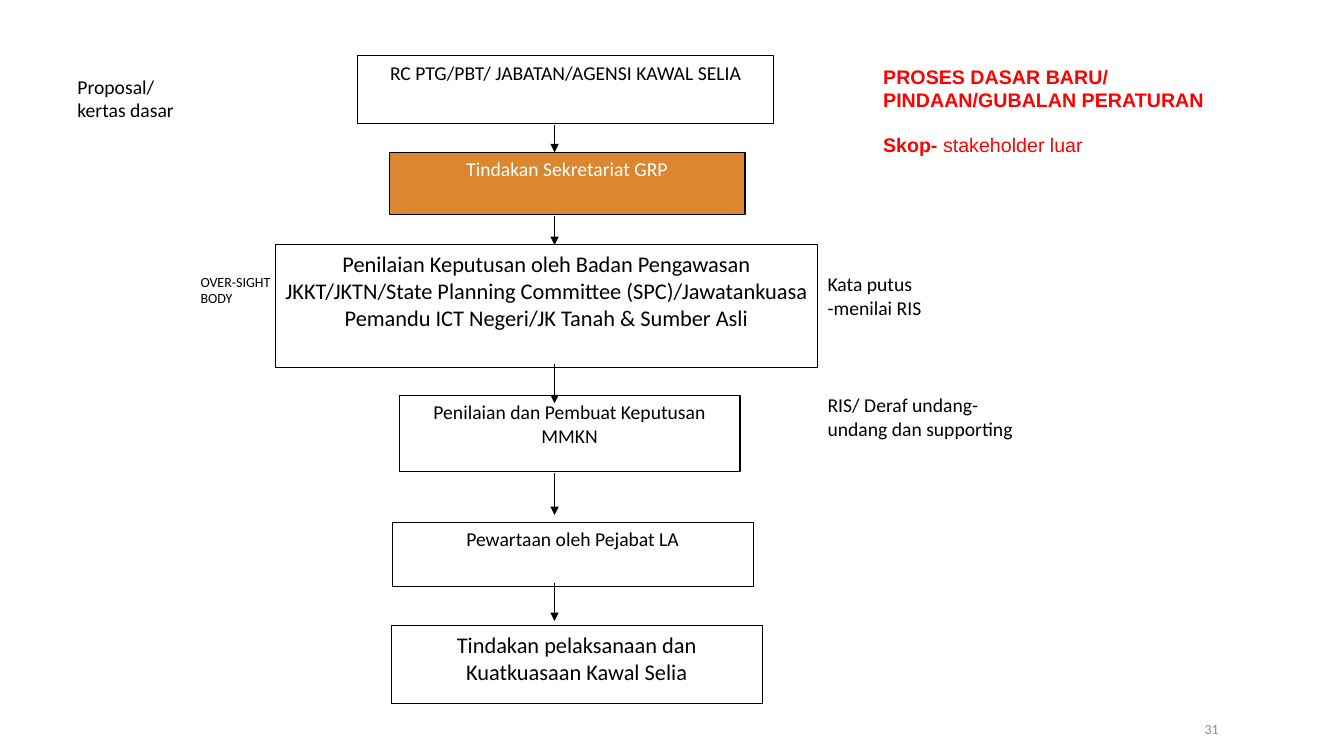
from dataclasses import dataclass
from typing import Optional

from lxml.etree import SubElement
from pptx import Presentation
from pptx.dml.color import RGBColor
from pptx.enum.shapes import MSO_CONNECTOR, MSO_SHAPE
from pptx.enum.text import MSO_ANCHOR, MSO_AUTO_SIZE, PP_ALIGN
from pptx.oxml.ns import qn
from pptx.util import Inches, Pt

BLACK = RGBColor(0x00, 0x00, 0x00)
WHITE = RGBColor(0xFF, 0xFF, 0xFF)
ORANGE = RGBColor(0xDB, 0x86, 0x31)
RED = RGBColor(0xFF, 0x00, 0x00)
GRAY = RGBColor(0x8C, 0x8C, 0x8C)
ARROW_X = 5.5


@dataclass
class Run:
    text: str
    bold: bool = False


@dataclass
class Style:
    size: float = 14
    color: RGBColor = BLACK
    font: str = "Calibri"
    align: PP_ALIGN = PP_ALIGN.LEFT
    anchor: MSO_ANCHOR = MSO_ANCHOR.TOP


@dataclass
class Step:
    left: float
    top: float
    width: float
    height: float
    text: str
    size: float = 14
    fill: Optional[RGBColor] = None


@dataclass
class Label:
    left: float
    top: float
    width: float
    height: float
    paragraphs: list[list[Run]]
    style: Style


@dataclass
class Arrow:
    start: float
    end: float


BODY = Style()
HEADING = Style(color=RED, font="Arial")

TITLE = Label(8.66, 0.59, 4.33, 0.68,
              [[Run("PROSES DASAR BARU/ PINDAAN/GUBALAN PERATURAN", True)]], HEADING)

STEPS = [
    Step(3.55, 0.55, 4.12, 0.68, "RC PTG/PBT/ JABATAN/AGENSI KAWAL SELIA"),
    Step(3.86, 1.51, 3.53, 0.62, "Tindakan Sekretariat GRP", fill=ORANGE),
    Step(2.73, 2.43, 5.38, 1.22,
         "Penilaian Keputusan oleh Badan Pengawasan JKKT/JKTN/State Planning "
         "Committee (SPC)/Jawatankuasa Pemandu ICT Negeri/JK Tanah & Sumber Asli", 16),
    Step(3.96, 3.92, 3.38, 0.76, "Penilaian dan Pembuat Keputusan MMKN"),
    Step(3.89, 5.18, 3.58, 0.64, "Pewartaan oleh Pejabat LA"),
    Step(3.88, 6.21, 3.68, 0.77, "Tindakan pelaksanaan dan Kuatkuasaan Kawal Selia", 16),
]

ARROWS = [Arrow(1.24, 1.51), Arrow(2.14, 2.43), Arrow(3.61, 4.0),
          Arrow(4.69, 5.11), Arrow(5.78, 6.16)]

LABELS = [
    Label(0.67, 0.69, 2.06, 0.57, [[Run("Proposal/")], [Run("kertas dasar")]], BODY),
    Label(1.89, 2.66, 0.89, 0.61, [[Run("OVER-SIGHT BODY")]], Style(size=10)),
    Label(8.11, 2.65, 2.06, 0.57, [[Run("Kata putus")], [Run("-menilai RIS")]], BODY),
    Label(8.11, 3.85, 2.06, 0.57,
          [[Run("RIS/ Deraf undang-undang dan supporting")]], BODY),
    Label(8.66, 1.27, 4.33, 0.64,
          [[Run("Skop- ", True), Run("stakeholder luar")]], HEADING),
    Label(11.85, 7.08, 1.06, 0.3, [[Run("31")]],
          Style(size=10, color=GRAY, anchor=MSO_ANCHOR.MIDDLE)),
]


def write_text(shape, paragraphs: list[list[Run]], style: Style) -> None:
    frame = shape.text_frame
    frame.word_wrap = True
    frame.auto_size = MSO_AUTO_SIZE.NONE
    frame.vertical_anchor = style.anchor
    for index, runs in enumerate(paragraphs):
        paragraph = frame.add_paragraph() if index else frame.paragraphs[0]
        paragraph.alignment = style.align
        for item in runs:
            run = paragraph.add_run()
            run.text = item.text
            run.font.name = style.font
            run.font.size = Pt(style.size)
            run.font.bold = item.bold
            run.font.color.rgb = style.color


def add_title(slide, title: Label) -> None:
    shape = slide.shapes.title
    shape.left, shape.top = Inches(title.left), Inches(title.top)
    shape.width, shape.height = Inches(title.width), Inches(title.height)
    write_text(shape, title.paragraphs, title.style)


def add_step(slide, step: Step) -> None:
    shape = slide.shapes.add_shape(MSO_SHAPE.RECTANGLE, Inches(step.left), Inches(step.top),
                                   Inches(step.width), Inches(step.height))
    shape.shadow.inherit = False
    shape.line.color.rgb = BLACK
    shape.line.width = Pt(0.75)
    if step.fill is None:
        shape.fill.background()
    else:
        shape.fill.solid()
        shape.fill.fore_color.rgb = step.fill
    color = BLACK if step.fill is None else WHITE
    write_text(shape, [[Run(step.text)]], Style(step.size, color, align=PP_ALIGN.CENTER))


def add_arrow(slide, arrow: Arrow) -> None:
    connector = slide.shapes.add_connector(MSO_CONNECTOR.STRAIGHT,
                                           Inches(ARROW_X), Inches(arrow.start),
                                           Inches(ARROW_X), Inches(arrow.end))
    connector.line.color.rgb = BLACK
    connector.line.width = Pt(0.75)
    properties = connector.element.spPr
    SubElement(properties.find(qn("a:ln")), qn("a:tailEnd"), type="triangle")
    SubElement(properties, qn("a:effectLst"))


def add_label(slide, label: Label) -> None:
    box = slide.shapes.add_textbox(Inches(label.left), Inches(label.top),
                                   Inches(label.width), Inches(label.height))
    write_text(box, label.paragraphs, label.style)


def main() -> None:
    presentation = Presentation()
    presentation.slide_width = Inches(13.33)
    presentation.slide_height = Inches(7.5)
    slide = presentation.slides.add_slide(presentation.slide_layouts[5])

    # Heading
    add_title(slide, TITLE)

    # Flow of steps
    for step in STEPS:
        add_step(slide, step)
    for arrow in ARROWS:
        add_arrow(slide, arrow)

    # Side notes and page number
    for label in LABELS:
        add_label(slide, label)

    presentation.save("out.pptx")


if __name__ == "__main__":
    main()
